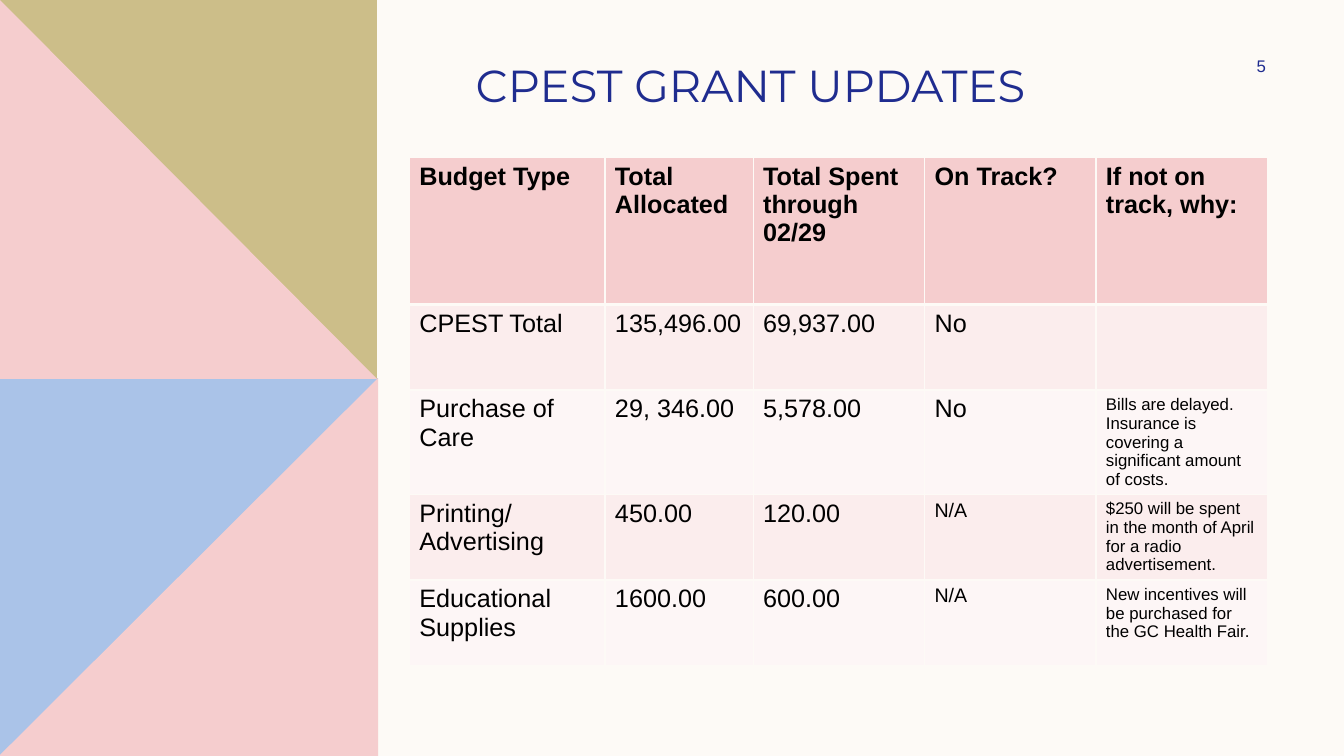
import pptx
import pptx.util
import pptx.dml.color
import pptx.enum.text
import pptx.oxml
import pptx.oxml.ns

HUES = {
    "cream": "FDFAF6", "blue": "AAC3E8", "pink": "F5CDCE", "olive": "CCBE89",
    "navy": "1F2C8F", "black": "000000", "rose": "FBEDED", "pale": "FDF6F6",
}
Inches = pptx.util.Inches


def color(name):
    return pptx.dml.color.RGBColor.from_string(HUES[name])


class Page:
    base = {"name": "Arial", "size": 18, "bold": False}

    def __init__(self, deck):
        self.slide = deck.slides.add_slide(deck.slide_layouts[6])
        self.shapes = self.slide.shapes
        self.paint(self.slide.background.fill, "cream")

    def paint(self, fill, hue):
        fill.solid()
        fill.fore_color.rgb = color(hue)

    def shape(self, points, hue):
        pen = self.shapes.build_freeform(
            *map(Inches, points[0]), scale=1.0)
        pen.add_line_segments([tuple(map(Inches, p)) for p in points[1:]])
        form = pen.convert_to_shape()
        form.shadow.inherit = False
        self.paint(form.fill, hue)
        form.line.fill.background()

    def label(self, frame, text, hue="black", align=None, **style):
        frame.word_wrap = True
        frame.text = text
        look = {**self.base, **style}
        look["size"] = pptx.util.Pt(look["size"])
        for para in frame.paragraphs:
            para.alignment = align
            for font in [para.font] + [run.font for run in para.runs]:
                for key, value in look.items():
                    setattr(font, key, value)
                font.color.rgb = color(hue)

    def text(self, box, text, **style):
        frame = self.shapes.add_textbox(*map(Inches, box)).text_frame
        frame.vertical_anchor = pptx.enum.text.MSO_ANCHOR.MIDDLE
        self.label(frame, text, **style)

    def edge(self, cell, widths):
        props = cell._tc.get_or_add_tcPr()
        for spot, (side, width) in enumerate(widths.items()):
            props.insert(spot, pptx.oxml.parse_xml(
                f'<a:ln{side} {pptx.oxml.ns.nsdecls("a")} w="{pptx.util.Pt(width)}">'
                f'<a:solidFill><a:srgbClr val="{HUES["cream"]}"/></a:solidFill>'
                f'</a:ln{side}>'))

    def table(self, left, top, cols, highs, rows, sizes):
        box = map(Inches, (left, top, sum(cols), sum(highs)))
        grid = self.shapes.add_table(len(rows), len(cols), *box).table
        for col, width in zip(grid.columns, cols):
            col.width = Inches(width)
        for r, (row, high) in enumerate(zip(rows, highs)):
            grid.rows[r].height = Inches(high)
            hue = "pink" if r == 0 else ("pale", "rose")[r % 2]
            for c, words in enumerate(row):
                cell = grid.cell(r, c)
                self.label(cell.text_frame, words, bold=r == 0,
                           size=sizes.get((r, c), 18))
                self.paint(cell.fill, hue)
                self.edge(cell, {"L": 1, "R": 1, "T": 3 if r == 1 else 1,
                                 "B": 3 if r == 0 else 1})


ROWS = [
    ["Budget Type", "Total Allocated", "Total Spent through 02/29",
     "On Track?", "If not on track, why:"],
    ["CPEST Total", "135,496.00", "69,937.00", "No", ""],
    ["Purchase of Care", "29, 346.00", "5,578.00", "No",
     "Bills are delayed. Insurance is covering a significant amount of costs."],
    ["Printing/\nAdvertising", "450.00", "120.00", "N/A",
     "$250 will be spent in the month of April for a radio advertisement."],
    ["Educational Supplies", "1600.00", "600.00", "N/A",
     "New incentives will be purchased for the GC Health Fair."],
]
SIZES = {(2, 4): 12, (3, 4): 12, (4, 4): 12, (3, 3): 14, (4, 3): 14}


def main():
    deck = pptx.Presentation()
    deck.slide_width, deck.slide_height = Inches(13.33), Inches(7.5)
    page = Page(deck)
    side, wide, mid, foot = 3.75, 3.74, 3.76, 7.5
    page.shape([(0, side), (side, side), (side, foot), (0, foot)], "blue")
    page.shape([(side, side), (side, foot), (0, foot), (0, 7.49)], "pink")
    page.shape([(0, 0), (wide, 0), (wide, mid), (0, mid)], "olive")
    page.shape([(0, 0), (wide, mid), (0, mid)], "pink")
    page.table(4.06, 1.56, [1.94, 1.47] + [1.7] * 3,
               [1.46] + [0.85] * 4, ROWS, SIZES)
    page.text((4.62, 0.5, 7.49, 0.67), "CPEST GRANT UPDATES",
              hue="navy", name="Montserrat", size=32)
    page.text((11.97, 0.5, 1.08, 0.3), "5", hue="navy", size=12,
              align=pptx.enum.text.PP_ALIGN.CENTER)
    deck.save("out.pptx")


if __name__ == "__main__":
    main()
